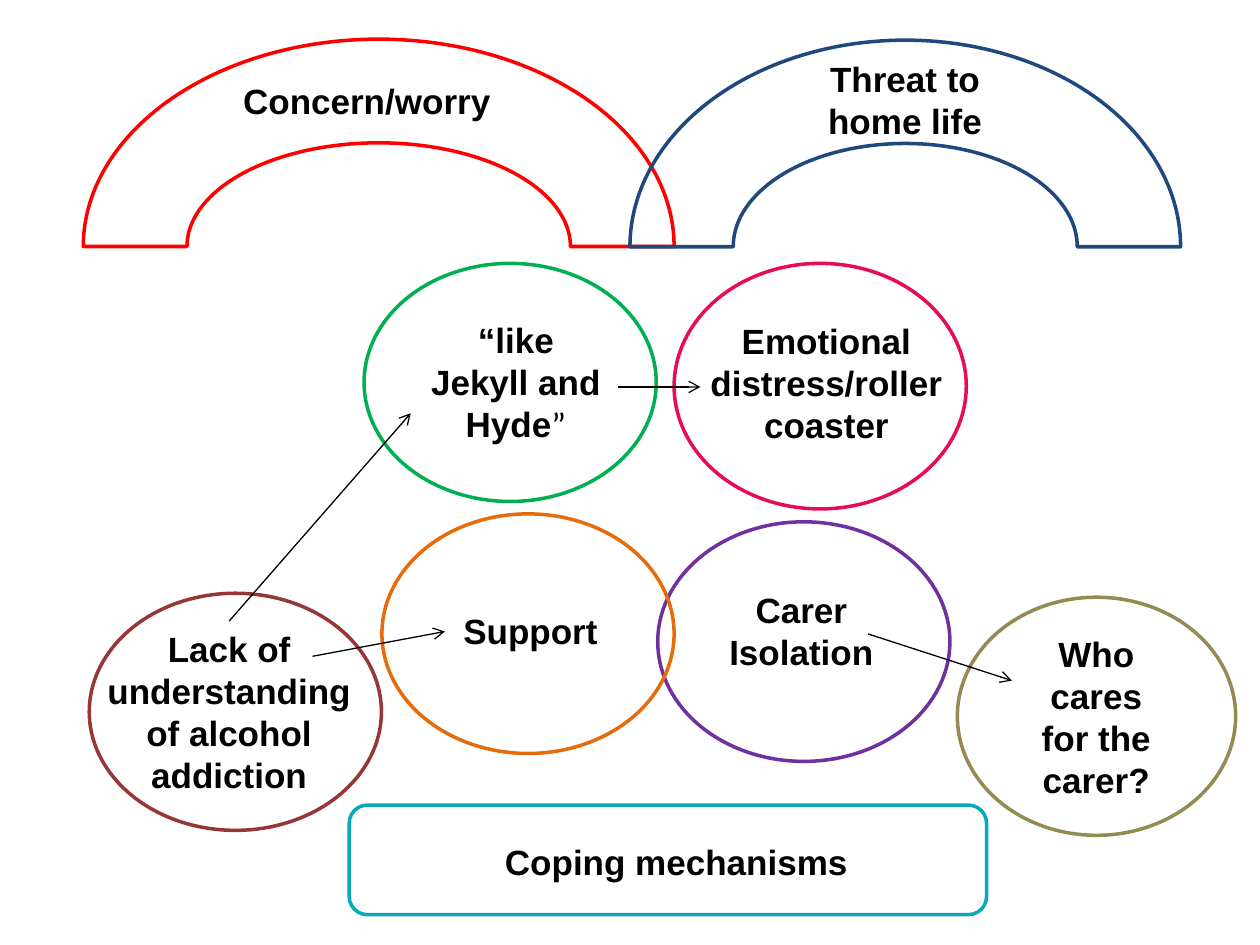
from dataclasses import dataclass

from lxml import etree
from pptx import Presentation
from pptx import util as u
from pptx.dml.color import RGBColor
from pptx.enum import shapes, text
from pptx.oxml import ns


@dataclass(frozen=True)
class Theme:
    font: str = "Arial"
    quote_font: str = "Calibri"
    size: int = 20
    outline: float = 2
    arrow: float = 0.75
    ink: str = "000000"
    concern: str = "FF0000"
    threat: str = "1F497D"
    jekyll: str = "00B050"
    distress: str = "E60C5A"
    lack: str = "953735"
    support: str = "E46C0A"
    isolation: str = "7030A0"
    carer: str = "948A54"
    coping: str = "08A9BA"


class ThemeMap:
    def __init__(self, page, theme):
        self.page = page
        self.theme = theme

    def outline(self, kind, color, *place):
        shape = self.page.shapes.add_shape(kind, *map(u.Cm, place))
        shape.shadow.inherit = False
        shape.fill.background()
        shape.line.color.rgb = RGBColor.from_string(color)
        shape.line.width = u.Pt(self.theme.outline)

    def label(self, words, *place, align=text.PP_ALIGN.CENTER):
        box = self.page.shapes.add_textbox(*map(u.Cm, place))
        box.text_frame.word_wrap = True
        box.text_frame.auto_size = text.MSO_AUTO_SIZE.SHAPE_TO_FIT_TEXT
        para = box.text_frame.paragraphs[0]
        para.alignment = align
        para.font.name = self.theme.font
        para.font.size = u.Pt(self.theme.size)
        para.font.bold = True
        para.font.color.rgb = RGBColor.from_string(self.theme.ink)
        para.add_run().text = words
        return para

    def closing_quote(self, para):
        span = para.add_run()
        span.text = "”"
        span.font.name = self.theme.quote_font
        span.font.bold = False

    def arrow(self, *ends):
        connector = self.page.shapes.add_connector(
            shapes.MSO_CONNECTOR.STRAIGHT, *map(u.Cm, ends))
        connector.line.color.rgb = RGBColor.from_string(self.theme.ink)
        connector.line.width = u.Pt(self.theme.arrow)
        line = connector.line._get_or_add_ln()
        etree.SubElement(line, ns.qn("a:tailEnd"), type="arrow")
        etree.SubElement(connector._element.spPr, ns.qn("a:effectLst"))


def main():
    deck = Presentation()
    deck.slide_width, deck.slide_height = u.Cm(25.4), u.Cm(19.05)
    theme = Theme()
    chart = ThemeMap(deck.slides.add_slide(deck.slide_layouts[6]), theme)

    oval = shapes.MSO_SHAPE.OVAL
    arc = shapes.MSO_SHAPE.BLOCK_ARC
    panel = shapes.MSO_SHAPE.ROUNDED_RECTANGLE
    for kind, color, *place in (
        (oval, theme.distress, 13.59, 5.31, 5.89, 4.95),
        (oval, theme.jekyll, 7.34, 5.31, 5.89, 4.8),
        (oval, theme.lack, 1.8, 11.96, 5.89, 4.78),
        (oval, theme.carer, 19.3, 12.04, 5.61, 4.8),
        (oval, theme.isolation, 13.26, 10.52, 5.89, 4.83),
        (oval, theme.support, 7.7, 10.36, 5.89, 4.83),
        (panel, theme.coping, 7.04, 16.23, 12.85, 2.21),
        (arc, theme.concern, 1.68, 0.79, 11.91, 8.36),
        (arc, theme.threat, 12.7, 0.81, 11.1, 8.33),
    ):
        chart.outline(kind, color, *place)

    jekyll = chart.label("“like Jekyll and Hyde", 8.38, 6.3, 4.04, 2.82)
    chart.closing_quote(jekyll)
    for words, *place in (
        ("Emotional distress/rollercoaster", 13.94, 6.32, 5.44, 2.82),
        ("Carer Isolation", 14.25, 11.73, 3.81, 1.96),
        ("Who cares for the carer?", 20.4, 12.62, 3.4, 3.68),
        ("Lack of understanding of alcohol addiction", 1.8, 12.52, 5.64, 3.68),
        ("Concern/worry", 4.5, 1.47, 5.79, 1.12),
        ("Threat to home life", 15.49, 1.04, 5.51, 1.96),
    ):
        chart.label(words, *place)
    for words, *place in (
        ("Coping mechanisms", 9.93, 16.81, 7.7, 1.12),
        ("Support", 9.09, 12.17, 3.23, 1.12),
    ):
        chart.label(words, *place, align=text.PP_ALIGN.LEFT)

    for ends in (
        (6.3, 13.23, 8.97, 12.73),
        (12.45, 7.8, 14.12, 7.8),
        (17.5, 12.78, 20.4, 13.72),
        (4.62, 12.52, 8.28, 8.33),
    ):
        chart.arrow(*ends)

    deck.save("out.pptx")


if __name__ == "__main__":
    main()
